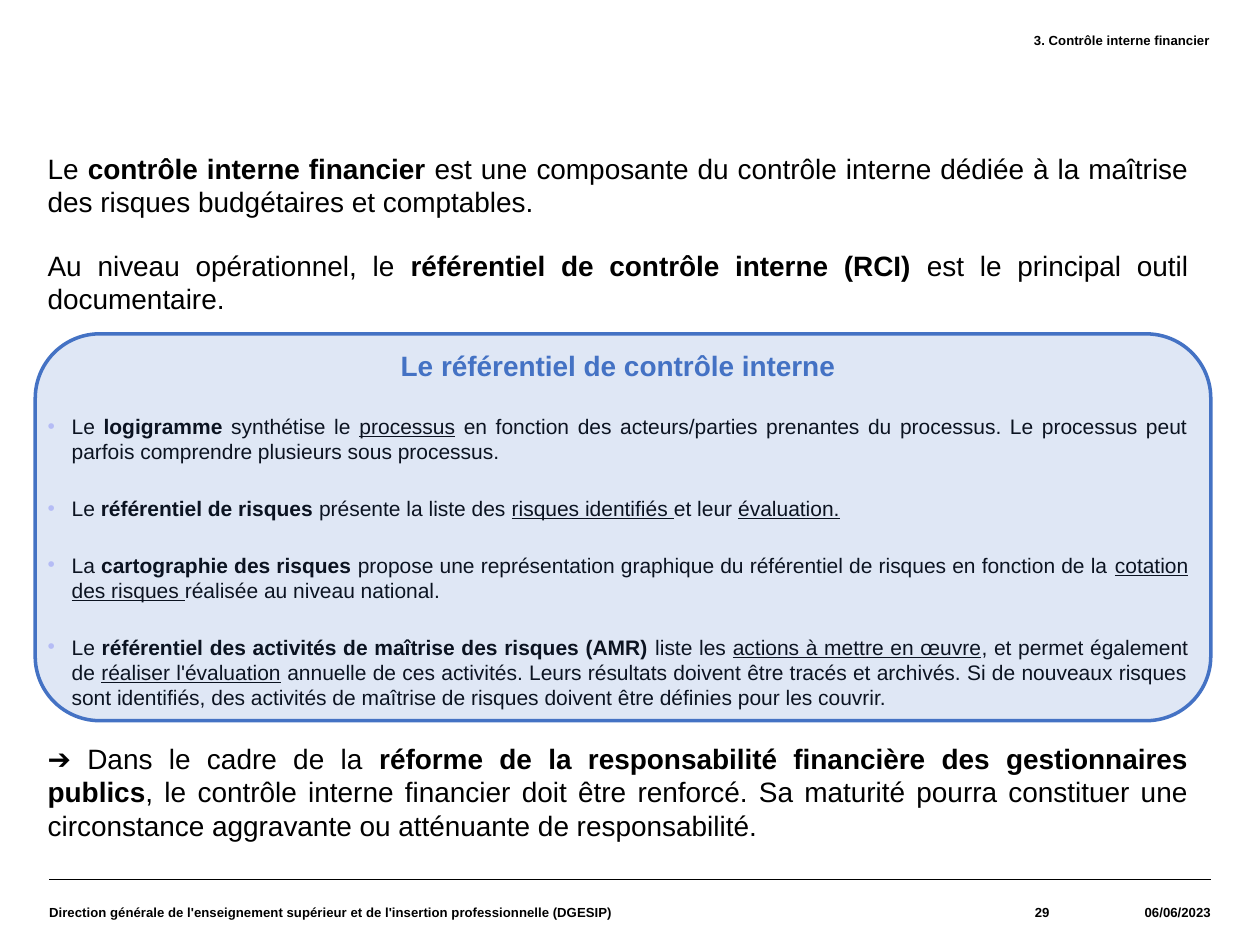
import pptx
import pptx.util
import pptx.dml.color
import pptx.enum.shapes
import pptx.enum.text
import pptx.oxml
import pptx.oxml.ns
from pptx.util import Inches

ALIGN = pptx.enum.text.PP_ALIGN
ANCHOR = pptx.enum.text.MSO_ANCHOR
SHAPE = pptx.enum.shapes.MSO_SHAPE
BLACK, BLUE, LILAC, WHITE = "000000", "4472C4", "CCCCFF", "FFFFFF"


def color(code):
    return pptx.dml.color.RGBColor.from_string(code)


def child(parent, tag, **attrs):
    node = pptx.oxml.parse_xml(f"<a:{tag} {pptx.oxml.ns.nsdecls('a')}/>")
    for key, value in attrs.items():
        node.set(key, str(value))
    parent.append(node)
    return node


def write(para, text, size=16, tint=BLACK, bold=False, align=ALIGN.JUSTIFY,
          before=0, bullet=False):
    """Fill a paragraph; *...* marks bold and _..._ marks underline."""
    para.alignment = align
    para.space_before = pptx.util.Pt(before)
    if bullet:
        props = para._p.get_or_add_pPr()
        props.set("marL", str(Inches(0.19)))
        props.set("indent", str(Inches(-0.19)))
        child(child(props, "buClr"), "srgbClr", val=LILAC)
        child(props, "buFont", typeface="Arial")
        child(props, "buChar", char="•")
    for i, part in enumerate(text.split("*")):
        for j, piece in enumerate(part.split("_")):
            if piece:
                run = para.add_run()
                run.text = piece
                font = run.font
                font.name = "Arial"
                font.size = pptx.util.Pt(size)
                font.color.rgb = color(tint)
                font.bold = bold or i % 2 == 1
                font.underline = j % 2 == 1


class Page:
    def __init__(self, deck):
        self.slide = deck.slides.add_slide(deck.slide_layouts[6])
        self.shapes = self.slide.shapes

    def rule(self, left, right, y):
        kind = pptx.enum.shapes.MSO_CONNECTOR.STRAIGHT
        line = self.shapes.add_connector(
            kind, Inches(left), Inches(y), Inches(right), Inches(y))
        line.line.color.rgb = color(BLACK)
        line.line.width = pptx.util.Pt(0.8)
        child(line._element.spPr, "effectLst")

    def label(self, text, left, top, width, align, anchor=ANCHOR.MIDDLE):
        box = self.shapes.add_textbox(
            Inches(left), Inches(top), Inches(width), Inches(0.52))
        frame = box.text_frame
        frame.word_wrap = True
        frame.vertical_anchor = anchor
        frame.margin_left = frame.margin_right = 0
        frame.margin_top = frame.margin_bottom = 0
        write(frame.paragraphs[0], text, size=7.5, bold=True, align=align)

    def panel(self, kind, left, top, width, height, fill, edge=None, alpha=None):
        shape = self.shapes.add_shape(
            kind, Inches(left), Inches(top), Inches(width), Inches(height))
        shape.shadow.inherit = False
        shape.fill.solid()
        shape.fill.fore_color.rgb = color(fill)
        if alpha:
            tone = shape._element.spPr.find(".//" + pptx.oxml.ns.qn("a:srgbClr"))
            child(tone, "alpha", val=alpha * 1000)
        if edge:
            shape.line.color.rgb = color(edge)
            shape.line.width = pptx.util.Pt(2)
        else:
            shape.line.fill.background()
        return shape

    def body(self, items, *place):
        frame = self.panel(SHAPE.RECTANGLE, *place, WHITE).text_frame
        frame.word_wrap = True
        frame.vertical_anchor = ANCHOR.TOP
        for i, (text, style) in enumerate(items):
            para = frame.add_paragraph() if i else frame.paragraphs[0]
            write(para, text, **style)


POINT = dict(size=12, before=18, bullet=True)
ITEMS = [
    ("Le *contrôle interne financier *est une composante du contrôle interne "
     "dédiée à la maîtrise des risques budgétaires et comptables.", {}),
    ("Au niveau opérationnel, le *référentiel de contrôle interne (RCI) *"
     "est le principal outil documentaire.", dict(before=17)),
    ("Le référentiel de contrôle interne",
     dict(tint=BLUE, bold=True, align=ALIGN.CENTER, before=19)),
    ("Le *logigramme* synthétise le _processus_ en fonction des acteurs/parties "
     "prenantes du processus. Le processus peut parfois comprendre plusieurs "
     "sous processus.", POINT),
    ("Le *référentiel de risques *présente la liste des _risques identifiés _"
     "et leur _évaluation._", POINT),
    ("La *cartographie des risques *propose une représentation graphique du "
     "référentiel de risques en fonction de la _cotation des risques _"
     "réalisée au niveau national.", POINT),
    ("Le *référentiel des activités de maîtrise des risques (AMR) *liste les "
     "_actions à mettre en œuvre_, et permet également de _réaliser l'évaluation_ "
     "annuelle de ces activités. Leurs résultats doivent être tracés et archivés. "
     "Si de nouveaux risques sont identifiés, des activités de maîtrise de "
     "risques doivent être définies pour les couvrir.", POINT),
    ("➔ Dans le cadre de la *réforme de la responsabilité financière des "
     "gestionnaires publics*, le contrôle interne financier doit être renforcé. "
     "Sa maturité pourra constituer une circonstance aggravante ou atténuante "
     "de responsabilité.", dict(before=18)),
]


def main():
    deck = pptx.Presentation()
    deck.slide_width, deck.slide_height = Inches(10), Inches(7.5)
    page = Page(deck)

    # Header and footer
    foot = 6.98
    page.rule(0.39, 9.61, foot)
    page.label("3. Contrôle interne financier", 3.62, 0.26, 5.98,
               ALIGN.RIGHT, ANCHOR.TOP)
    page.label("06/06/2023", 8.33, foot, 1.28, ALIGN.RIGHT)
    page.label("29", 6.85, foot, 1.48, ALIGN.RIGHT)
    page.label("Direction générale de l'enseignement supérieur et de l'insertion "
               "professionnelle (DGESIP)", 0.39, foot, 6.46, ALIGN.LEFT)

    # Body text, with a tinted frame over the RCI section
    page.body(ITEMS, 0.28, 1.15, 9.25, 5.71)
    page.panel(SHAPE.ROUNDED_RECTANGLE, 0.28, 2.65, 9.33, 3.07,
               BLUE, edge=BLUE, alpha=17)

    deck.save("out.pptx")


if __name__ == "__main__":
    main()
